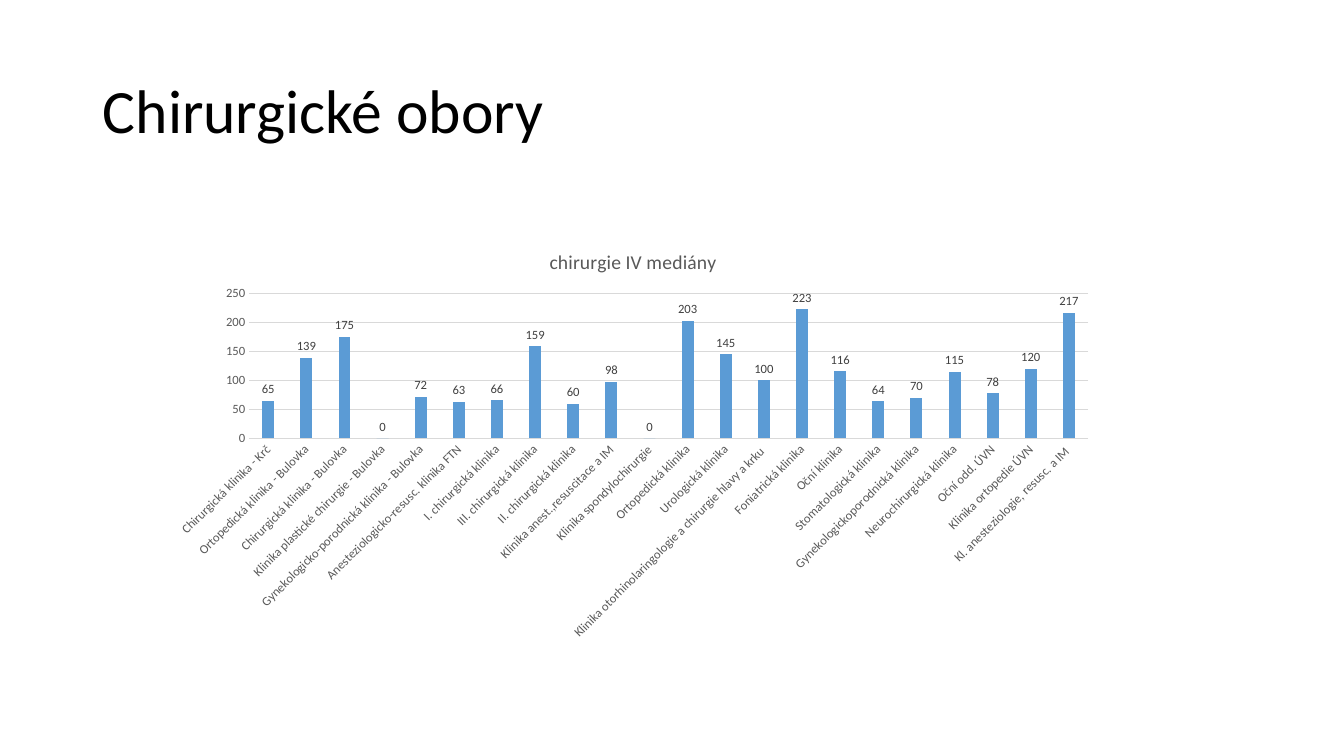
from dataclasses import dataclass

from lxml import etree
from pptx import Presentation
from pptx import util as u
from pptx.chart.data import CategoryChartData
from pptx.dml.color import RGBColor
from pptx.enum import chart as ch, text
from pptx.oxml.ns import qn


@dataclass(frozen=True)
class Theme:
    font: str = "Calibri"
    black: str = "000000"
    grey: str = "595959"
    label: str = "404040"
    grid: str = "D9D9D9"
    bar: str = "5B9BD5"
    title_size: float = 44
    chart_title_size: float = 14
    small_size: float = 9


THEME = Theme()
WIDTH, HEIGHT = 13.33, 7.5
TITLE_BOX = (0.92, 0.4, 11.5, 1.45)
CHART_BOX = (1.59, 2.29, 9.38, 4.15)
# Plot area as shares of the chart box
PLOT_SHARES = {"x": 0.094, "y": 0.15, "w": 0.887, "h": 0.346}

MEDIANS = [
    ("Chirurgická klinika - Krč", 65),
    ("Ortopedická klinika - Bulovka", 139),
    ("Chirurgická klinika - Bulovka", 175),
    ("Klinika plastické chirurgie - Bulovka", 0),
    ("Gynekologicko-porodnická klinika - Bulovka", 72),
    ("Anesteziologicko-resusc. klinika FTN", 63),
    ("I. chirurgická klinika", 66),
    ("III. chirurgická klinika", 159),
    ("II. chirurgická klinika", 60),
    ("Klinika anest.,resuscitace a IM", 98),
    ("Klinika spondylochirurgie", 0),
    ("Ortopedická klinika", 203),
    ("Urologická klinika", 145),
    ("Klinika otorhinolaringologie a chirurgie hlavy a krku ", 100),
    ("Foniatrická klinika", 223),
    ("Oční klinika", 116),
    ("Stomatologická klinika", 64),
    ("Gynekologickoporodnická klinika", 70),
    ("Neurochirurgická klinika", 115),
    ("Oční odd. ÚVN", 78),
    ("Klinika ortopedie ÚVN", 120),
    ("Kl. anesteziologie, resusc. a IM ", 217),
]


def inches(box):
    return [u.Inches(length) for length in box]


def style_font(font, size, color):
    font.name = THEME.font
    font.size = u.Pt(size)
    font.bold = False
    font.color.rgb = RGBColor.from_string(color)


def style_line(line, color):
    line.color.rgb = RGBColor.from_string(color)
    line.width = u.Pt(0.75)


def fix_plot_area(chart, shares):
    """Set the inner plot area, which python-pptx leaves automatic."""
    plot_area = chart.plots[0]._element.getparent()
    for old in plot_area.findall(qn("c:layout")):
        plot_area.remove(old)
    layout = etree.Element(qn("c:layout"))
    manual = etree.SubElement(layout, qn("c:manualLayout"))
    settings = {"layoutTarget": "inner", "xMode": "edge", "yMode": "edge", **shares}
    for tag, value in settings.items():
        etree.SubElement(manual, qn(f"c:{tag}")).set("val", str(value))
    plot_area.insert(0, layout)


def add_title(page, box, wording):
    title = page.shapes.title
    title.left, title.top, title.width, title.height = inches(box)
    frame = title.text_frame
    frame.text = wording
    frame.word_wrap = True
    frame.vertical_anchor = text.MSO_ANCHOR.MIDDLE
    para = frame.paragraphs[0]
    para.alignment = text.PP_ALIGN.LEFT
    para.line_spacing = 0.9
    style_font(para.runs[0].font, THEME.title_size, THEME.black)


def add_median_chart(page, box, heading, medians):
    data = CategoryChartData(number_format="#,##0")
    data.categories = [clinic for clinic, _ in medians]
    data.add_series("Series 1", [median for _, median in medians])
    chart = page.shapes.add_chart(
        ch.XL_CHART_TYPE.COLUMN_CLUSTERED, *inches(box), data).chart
    style_font(chart.font, 10, THEME.black)
    chart.has_legend = False

    # Heading
    chart.has_title = True
    para = chart.chart_title.text_frame.paragraphs[0]
    para.text = heading
    style_font(para.runs[0].font, THEME.chart_title_size, THEME.grey)
    chart.chart_title.include_in_layout = False

    # Axes
    clinics, values = chart.category_axis, chart.value_axis
    for axis in (clinics, values):
        axis.major_tick_mark = axis.minor_tick_mark = ch.XL_TICK_MARK.NONE
        style_font(axis.tick_labels.font, THEME.small_size, THEME.grey)
    style_line(clinics.format.line, THEME.grid)
    clinics._element.find(qn("c:txPr")).find(qn("a:bodyPr")).set("rot", "-2700000")
    values.minimum_scale, values.maximum_scale, values.major_unit = 0, 250, 50
    values.format.line.fill.background()
    style_line(values.major_gridlines.format.line, THEME.grid)
    values.tick_labels.number_format = "#,##0"
    values.tick_labels.number_format_is_linked = False

    # Bars and their labels
    plot = chart.plots[0]
    plot.gap_width, plot.overlap, plot.vary_by_categories = 219, -27, False
    fill = plot.series[0].format.fill
    fill.solid()
    fill.fore_color.rgb = RGBColor.from_string(THEME.bar)
    labels = plot.series[0].data_labels
    labels.show_value = True
    labels.position = ch.XL_LABEL_POSITION.OUTSIDE_END
    labels.number_format = "#,##0"
    labels.number_format_is_linked = False
    style_font(labels.font, THEME.small_size, THEME.label)

    fix_plot_area(chart, PLOT_SHARES)


def main():
    deck = Presentation()
    deck.slide_width, deck.slide_height = inches((WIDTH, HEIGHT))
    page = deck.slides.add_slide(deck.slide_layouts.get_by_name("Title Only"))
    add_title(page, TITLE_BOX, "Chirurgické obory")
    add_median_chart(page, CHART_BOX, "chirurgie IV mediány", MEDIANS)
    deck.save("out.pptx")


if __name__ == "__main__":
    main()
